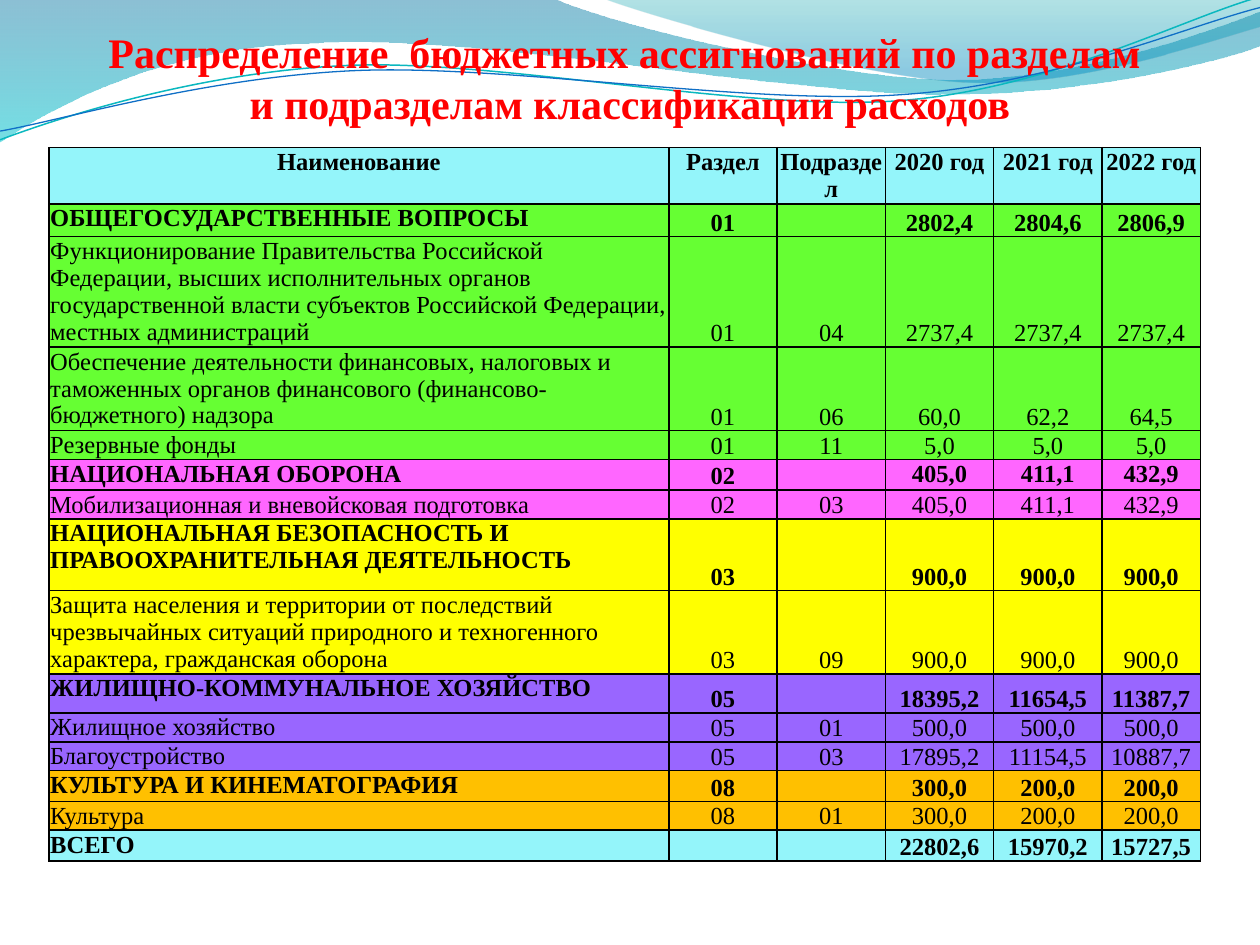
from lxml.etree import SubElement
from pptx import Presentation
from pptx.dml.color import RGBColor
from pptx.enum.text import MSO_ANCHOR, PP_ALIGN
from pptx.oxml.ns import qn
from pptx.util import Pt

BLACK = RGBColor(0, 0, 0)
RED = RGBColor(0xFF, 0, 0)
AQUA = RGBColor(0x94, 0xF5, 0xFA)
GREEN = RGBColor(0x66, 0xFF, 0x33)
PINK = RGBColor(0xFF, 0x66, 0xFF)
YELLOW = RGBColor(0xFF, 0xFF, 0)
VIOLET = RGBColor(0x99, 0x66, 0xFF)
ORANGE = RGBColor(0xFF, 0xC0, 0)
SEA = RGBColor(0, 0x74, 0xA1)
CYAN = RGBColor(0, 0xC6, 0xCF)
TEAL = RGBColor(0, 0xA1, 0xA9)
STEEL = RGBColor(0, 0x8B, 0xBF)
LAGOON = RGBColor(0x0A, 0xB8, 0xBF)
BLUE = RGBColor(0x0F, 0x6F, 0xC6)


def put(frame, text, size=14, bold=False, color=BLACK, align=PP_ALIGN.CENTER,
        pitch=None):
    para = frame.paragraphs[0]
    para.text = text
    para.alignment = align
    if pitch:
        para.line_spacing = Pt(pitch)
    for run in para.runs:
        run.font.name = "Times New Roman"
        run.font.size = Pt(size)
        run.font.bold = bold
        run.font.color.rgb = color
    if not text:
        SubElement(para._p, qn("a:endParaRPr"), sz=str(size * 100))


def draw(slide, start, steps, close):
    """Outline of straight steps (2 numbers) and cubic curves (6 numbers)."""
    pen = slide.shapes.build_freeform(Pt(start[0]), Pt(start[1]))
    for step in steps:
        dots = [(Pt(x), Pt(y)) for x, y in zip(step[::2], step[1::2])]
        pen.add_line_segments(dots, close=False)
    if close:
        pen.add_line_segments([], close=True)
    shape = pen.convert_to_shape()
    shape.shadow.inherit = False
    # Turn each run of three straight steps into one cubic curve
    lines = iter(shape.element.xpath(".//a:lnTo"))
    for step in steps:
        line = next(lines)
        if len(step) == 6:
            line.tag = qn("a:cubicBezTo")
            for _ in range(2):
                extra = next(lines)
                line.append(extra[0])
                extra.getparent().remove(extra)
    return shape


prs = Presentation()
prs.slide_width, prs.slide_height = Pt(720), Pt(540)
slide = prs.slides.add_slide(prs.slide_layouts[6])

# Translucent waves: start, steps, stops (place, colour, opacity in percent)
waves = [
    ((0, 0),
     [(316.8, -0.7), (342.7, 12.2, 478, 45.4, 545.8, 45.4),
      (614.2, 45.4, 689.8, 18.7, 720, 6.5), (720.7, 25.9),
      (707.8, 31.7, 626.4, 54.7, 537.1, 54), (447.8, 54, 275, 20.2, 185, 24.5),
      (92.9, 25.9, 33.1, 59.8, -0.7, 81.4)],
     [(0, SEA, 45), (1, CYAN, 55)]),
    ((344.9, -0.7),
     [(366.5, 7.9, 491, 44.6, 553.7, 46.8), (616.3, 49.7, 691.9, 23, 720, 15.1),
      (720, 0)],
     [(0, TEAL, 30), (0.8, STEEL, 45)]),
]
for start, steps, stops in waves:
    wave = draw(slide, start, steps, True)
    wave.line.fill.background()
    wave.fill.gradient()
    wave.fill.gradient_angle = 270
    for stop, (place, color, _) in zip(wave.fill.gradient_stops, stops):
        stop.position = place
        stop.color.rgb = color
    for tint, (_, _, alpha) in zip(wave.element.xpath(".//a:gs/a:srgbClr"), stops):
        SubElement(tint, qn("a:alpha"), val=str(alpha * 1000))

# Thin wavy lines
curves = [
    ((0, 79.9),
     [(34.6, 67, 113.8, 41, 199.4, 37.4), (284.4, 33.8, 427, 64.1, 513.4, 57.6),
      (599.8, 51.1, 675.4, 10.8, 718.6, -1.4)], LAGOON, 0.85),
    ((0, 74.9),
     [(33.8, 69.1, 118.1, 43.9, 203.8, 40.3), (290.2, 36.7, 429.8, 60.5, 516.2, 54),
      (601.9, 48.2, 677.5, 15.1, 720, 4.3)], BLUE, 0.75),
]
for start, steps, color, width in curves:
    curve = draw(slide, start, steps, False)
    curve.fill.background()
    curve.line.color.rgb = color
    curve.line.width = Pt(width)

# Title
title = slide.shapes.add_textbox(Pt(36), Pt(0), Pt(648), Pt(73)).text_frame
title.word_wrap = True
title.vertical_anchor = MSO_ANCHOR.BOTTOM
title.margin_left = title.margin_right = title.margin_bottom = 0
put(title, "Распределение  бюджетных ассигнований по разделам \n"
    "и подразделам классификации расходов", size=24, bold=True, color=RED)

# Table rows: height, fill, bold, cells
rows = [
    (32.2, AQUA, True, "Наименование|Раздел|Подраздел|2020 год|2021 год|2022 год"),
    (18.5, GREEN, True, "ОБЩЕГОСУДАРСТВЕННЫЕ ВОПРОСЫ|01||2802,4|2804,6|2806,9"),
    (63.4, GREEN, False, "Функционирование Правительства Российской Федерации, "
     "высших исполнительных органов государственной власти субъектов Российской "
     "Федерации, местных администраций|01|04|2737,4|2737,4|2737,4"),
    (47.7, GREEN, False, "Обеспечение деятельности финансовых, налоговых и таможенных "
     "органов финансового (финансово-бюджетного) надзора|01|06|60,0|62,2|64,5"),
    (16.5, GREEN, False, "Резервные фонды|01|11|5,0|5,0|5,0"),
    (16.5, PINK, True, "НАЦИОНАЛЬНАЯ ОБОРОНА|02||405,0|411,1|432,9"),
    (16.5, PINK, False,
     "Мобилизационная и вневойсковая подготовка|02|03|405,0|411,1|432,9"),
    (40.8, YELLOW, True, "НАЦИОНАЛЬНАЯ БЕЗОПАСНОСТЬ И ПРАВООХРАНИТЕЛЬНАЯ "
     "ДЕЯТЕЛЬНОСТЬ|03||900,0|900,0|900,0"),
    (47.7, YELLOW, False, "Защита населения и территории от последствий чрезвычайных "
     "ситуаций природного и техногенного характера, гражданская оборона"
     "|03|09|900,0|900,0|900,0"),
    (22.3, VIOLET, True,
     "ЖИЛИЩНО-КОММУНАЛЬНОЕ ХОЗЯЙСТВО|05||18395,2|11654,5|11387,7"),
    (16.5, VIOLET, False, "Жилищное хозяйство|05|01|500,0|500,0|500,0"),
    (16.5, VIOLET, False, "Благоустройство|05|03|17895,2|11154,5|10887,7"),
    (16.5, ORANGE, True, "КУЛЬТУРА И КИНЕМАТОГРАФИЯ|08||300,0|200,0|200,0"),
    (16.5, ORANGE, False, "Культура|08|01|300,0|200,0|200,0"),
    (16.5, AQUA, True, "ВСЕГО|||22802,6|15970,2|15727,5"),
]
widths = [354.2, 61.9, 61.9, 61.9, 61.9, 56.2]
high = sum(row[0] for row in rows)
table = slide.shapes.add_table(len(rows), len(widths), Pt(28), Pt(84.4),
                               Pt(sum(widths)), Pt(high)).table
table.first_row = table.horz_banding = False
for col, width in zip(table.columns, widths):
    col.width = Pt(width)

for r, (height, color, bold, line) in enumerate(rows):
    table.rows[r].height = Pt(height)
    for c, text in enumerate(line.split("|")):
        cell = table.cell(r, c)
        cell.margin_left = cell.margin_right = cell.margin_top = Pt(0.7)
        cell.margin_bottom = 0
        # Names, headings and the defence sums sit at the top
        top = c == 0 or r == 0 or (color == PINK and c > 2)
        cell.vertical_anchor = MSO_ANCHOR.TOP if top else MSO_ANCHOR.BOTTOM
        left = c == 0 and r > 0
        put(cell.text_frame, text, bold=bold, pitch=15.4,
            align=PP_ALIGN.LEFT if left else PP_ALIGN.CENTER)
        # Borders come before the fill in the cell's XML
        props = cell._tc.get_or_add_tcPr()
        for side in ("a:lnL", "a:lnR", "a:lnT", "a:lnB"):
            edge = SubElement(props, qn(side), w=str(Pt(1)))
            fill = SubElement(edge, qn("a:solidFill"))
            SubElement(fill, qn("a:srgbClr"), val=str(BLACK))
        cell.fill.solid()
        cell.fill.fore_color.rgb = color

prs.save("out.pptx")
